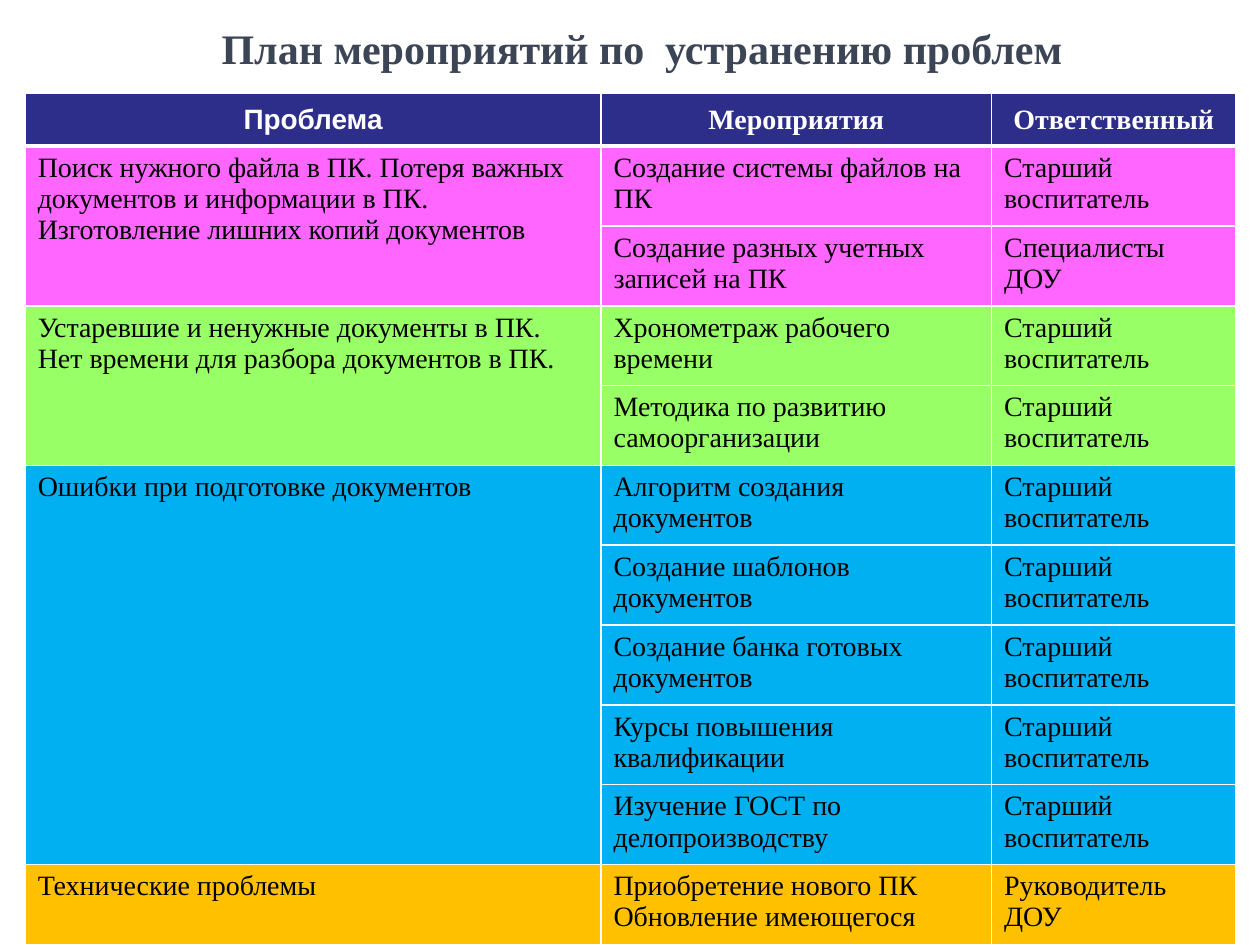
import pptx
import pptx.util
import pptx.dml.color
import pptx.enum.text
import pptx.oxml
import pptx.oxml.ns

Inches, Pt = pptx.util.Inches, pptx.util.Pt
RGBColor = pptx.dml.color.RGBColor
ALIGN = pptx.enum.text.PP_ALIGN
ANCHOR = pptx.enum.text.MSO_ANCHOR

WHITE = RGBColor(0xFF, 0xFF, 0xFF)
BLACK = RGBColor(0x00, 0x00, 0x00)
SLATE = RGBColor(0x3B, 0x45, 0x55)
NAVY = RGBColor(0x2D, 0x2D, 0x8A)
PINK = RGBColor(0xFF, 0x66, 0xFF)
GREEN = RGBColor(0x99, 0xFF, 0x66)
BLUE = RGBColor(0x00, 0xB0, 0xF0)
AMBER = RGBColor(0xFF, 0xC0, 0x00)

SERIF, SANS = "Times New Roman", "Arial"
TITLE_BOX = (1.62, 0.13, 6.95, 0.5)
TABLE_BOX = (0.2, 0.74, 9.61, 6.72)
COLUMN_SHARES = (4.57, 3.1, 1.94)
HEADER_HEIGHT = 0.42

TITLE = "План мероприятий по  устранению проблем"
HEADERS = (("Проблема", SANS), ("Мероприятия", SERIF), ("Ответственный", SERIF))
SENIOR = "Старший воспитатель"
# Each group: fill, problem, then (measure, person in charge) rows
GROUPS = (
    (PINK,
     "Поиск нужного файла в ПК. Потеря важных документов и информации в ПК.\n"
     "Изготовление лишних копий документов",
     (("Создание системы файлов на ПК", SENIOR),
      ("Создание разных учетных записей на ПК", "Специалисты ДОУ"))),
    (GREEN,
     "Устаревшие и ненужные документы в ПК. Нет времени для разбора документов в ПК.",
     (("Хронометраж рабочего времени", SENIOR),
      ("Методика по развитию самоорганизации", SENIOR))),
    (BLUE,
     "Ошибки при подготовке документов",
     (("Алгоритм создания документов", SENIOR),
      ("Создание шаблонов документов", SENIOR),
      ("Создание банка готовых документов", SENIOR),
      ("Курсы повышения квалификации", SENIOR),
      ("Изучение ГОСТ по делопроизводству", SENIOR))),
    (AMBER,
     "Технические проблемы",
     (("Приобретение нового ПК\nОбновление имеющегося", "Руководитель ДОУ"),)),
)


def write_text(frame, text, size=16, font=SERIF, color=BLACK, bold=False, align=ALIGN.LEFT):
    """Fill a text frame, one paragraph for each line of text."""
    for index, line in enumerate(text.split("\n")):
        para = frame.paragraphs[0] if index == 0 else frame.add_paragraph()
        para.alignment = align
        span = para.add_run()
        span.text = line
        span.font.size = Pt(size)
        span.font.name = font
        span.font.bold = bold
        span.font.color.rgb = color


def style_cell(cell, fill, top=1, bottom=1):
    """Set the fill and the white borders of a cell."""
    cell.fill.solid()
    cell.fill.fore_color.rgb = fill
    properties = cell._tc.get_or_add_tcPr()
    for index, (side, width) in enumerate(zip("LRTB", (1, 1, top, bottom))):
        properties.insert(index, pptx.oxml.parse_xml(
            f'<a:ln{side} {pptx.oxml.ns.nsdecls("a")} w="{Pt(width)}">'
            f'<a:solidFill><a:srgbClr val="{WHITE}"/></a:solidFill></a:ln{side}>'))


def add_title(page, box):
    frame = page.shapes.add_textbox(*map(Inches, box)).text_frame
    frame.word_wrap = False
    write_text(frame, TITLE, size=24, color=SLATE, bold=True, align=ALIGN.CENTER)


def add_plan(page, box):
    """Table of problems, measures and people in charge."""
    left, top, width, height = box
    body_rows = sum(len(measures) for _, _, measures in GROUPS)
    table = page.shapes.add_table(
        body_rows + 1, len(HEADERS), *map(Inches, box)).table

    # Column and row sizes
    for column, share in zip(table.columns, COLUMN_SHARES):
        column.width = Inches(width * share / sum(COLUMN_SHARES))
    for index, row in enumerate(table.rows):
        row.height = Inches((height - HEADER_HEIGHT) / body_rows if index else HEADER_HEIGHT)

    # Header
    for column, (text, font) in enumerate(HEADERS):
        cell = table.cell(0, column)
        style_cell(cell, NAVY, bottom=3)
        cell.vertical_anchor = ANCHOR.MIDDLE
        write_text(cell.text_frame, text, font=font, color=WHITE, bold=True,
                   align=ALIGN.CENTER)

    # Groups, each with its problem merged over its measures
    first = 1
    for fill, problem, measures in GROUPS:
        for row, texts in enumerate(measures, first):
            for column in range(len(HEADERS)):
                style_cell(table.cell(row, column), fill, top=3 if row == 1 else 1)
            for column, text in enumerate(texts, 1):
                write_text(table.cell(row, column).text_frame, text)
        problem_cell = table.cell(first, 0)
        if len(measures) > 1:
            problem_cell.merge(table.cell(first + len(measures) - 1, 0))
        write_text(problem_cell.text_frame, problem)
        first += len(measures)


def main():
    deck = pptx.Presentation()
    deck.slide_width, deck.slide_height = Inches(10), Inches(7.5)
    page = deck.slides.add_slide(deck.slide_layouts[6])
    add_title(page, TITLE_BOX)
    add_plan(page, TABLE_BOX)
    deck.save("out.pptx")


if __name__ == "__main__":
    main()
